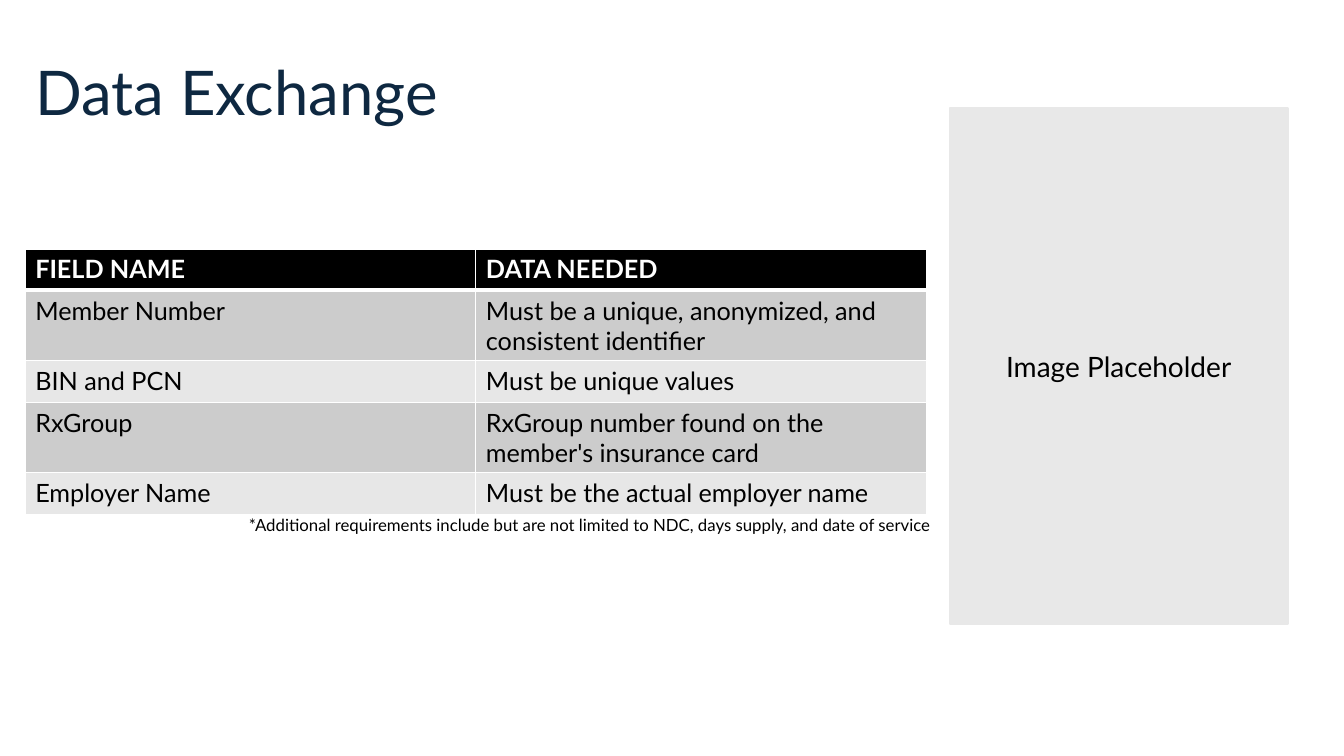
"""Build the Data Exchange slide with its field requirements table."""
from dataclasses import dataclass

from lxml.etree import SubElement
from pptx import Presentation
from pptx.dml.color import RGBColor
from pptx.enum.shapes import MSO_SHAPE
from pptx.enum.text import MSO_ANCHOR, MSO_AUTO_SIZE, PP_ALIGN
from pptx.oxml.ns import qn
from pptx.shapes.base import BaseShape
from pptx.slide import Slide
from pptx.table import _Cell
from pptx.text.text import _Paragraph
from pptx.util import Emu, Pt

PX_PER_INCH = 100
FONT = "Lato"
NAVY = RGBColor(0x0E, 0x28, 0x41)
BLACK = RGBColor(0x00, 0x00, 0x00)
WHITE = RGBColor(0xFF, 0xFF, 0xFF)
PANEL_GRAY = RGBColor(0xE8, 0xE8, 0xE8)
DARK_BAND = RGBColor(0xCC, 0xCC, 0xCC)
LIGHT_BAND = RGBColor(0xE7, 0xE7, 0xE7)
COLUMN_WIDTH = 447
ROW_HEIGHT = 41
THIN, THICK = 1, 3


@dataclass(frozen=True)
class Field:
    """A field name and the data it needs."""
    name: str
    needed: str


@dataclass(frozen=True)
class Box:
    """A position and size in px."""
    left: int
    top: int
    width: int
    height: int

    def emu(self) -> tuple[Emu, Emu, Emu, Emu]:
        """Return the box as EMU lengths."""
        return px(self.left), px(self.top), px(self.width), px(self.height)


FIELDS = [
    Field("FIELD NAME", "DATA NEEDED"),
    Field("Member Number", "Must be a unique, anonymized, and consistent identifier"),
    Field("BIN and PCN", "Must be unique values"),
    Field("RxGroup", "RxGroup number found on the member's insurance card"),
    Field("Employer Name", "Must be the actual employer name"),
]
TITLE_BOX = Box(25, 22, 1150, 145)
PANEL_BOX = Box(942, 107, 335, 512)
TABLE_BOX = Box(25, 247, 2 * COLUMN_WIDTH, len(FIELDS) * ROW_HEIGHT)
FOOTNOTE_BOX = Box(237, 506, 790, 30)


def px(length: int) -> Emu:
    """Turn px into EMU."""
    return Emu(length * 914400 // PX_PER_INCH)


def place(shape: BaseShape, box: Box) -> None:
    """Move and size a shape to a box."""
    shape.left, shape.top, shape.width, shape.height = box.emu()


def write(paragraph: _Paragraph, text: str, size: int, color: RGBColor,
          bold: bool = False) -> None:
    """Add one formatted run."""
    run = paragraph.add_run()
    run.text = text
    run.font.name = FONT
    run.font.size = Pt(size)
    run.font.bold = bold
    run.font.color.rgb = color


def add_borders(cell: _Cell, top: int, bottom: int) -> None:
    """Give a cell white borders, with top and bottom widths in points."""
    properties = cell._tc.get_or_add_tcPr()
    widths = {"a:lnL": THIN, "a:lnR": THIN, "a:lnT": top, "a:lnB": bottom}
    for side, width in widths.items():
        line = SubElement(properties, qn(side), w=str(Pt(width)))
        fill = SubElement(line, qn("a:solidFill"))
        SubElement(fill, qn("a:srgbClr"), val=str(WHITE))


def add_title(slide: Slide) -> None:
    """Fill the title placeholder."""
    title = slide.shapes.title
    place(title, TITLE_BOX)
    frame = title.text_frame
    frame.auto_size = MSO_AUTO_SIZE.NONE
    frame.vertical_anchor = MSO_ANCHOR.MIDDLE
    heading = frame.paragraphs[0]
    heading.alignment = PP_ALIGN.LEFT
    heading.line_spacing = 0.9
    write(heading, "Data Exchange", 44, NAVY)


def add_image_panel(slide: Slide) -> None:
    """Add the gray panel reserved for an image."""
    panel = slide.shapes.add_shape(MSO_SHAPE.RECTANGLE, *PANEL_BOX.emu())
    panel.shadow.inherit = False
    panel.fill.solid()
    panel.fill.fore_color.rgb = PANEL_GRAY
    panel.line.color.rgb = PANEL_GRAY
    panel.line.width = Pt(1.5)
    frame = panel.text_frame
    frame.word_wrap = True
    frame.vertical_anchor = MSO_ANCHOR.MIDDLE
    frame.margin_left = frame.margin_right = px(8)
    frame.margin_top = frame.margin_bottom = px(4)
    frame.paragraphs[0].alignment = PP_ALIGN.CENTER
    write(frame.paragraphs[0], "Image Placeholder", 20, BLACK)


def add_field_table(slide: Slide) -> None:
    """Add the table of fields with a black header and gray bands."""
    table = slide.shapes.add_table(len(FIELDS), 2, *TABLE_BOX.emu()).table
    table.horz_banding = False
    for row, field in enumerate(FIELDS):
        header = row == 0
        band = BLACK if header else DARK_BAND if row % 2 else LIGHT_BAND
        for column, text in enumerate((field.name, field.needed)):
            cell = table.cell(row, column)
            add_borders(cell, THICK if row == 1 else THIN, THICK if header else THIN)
            cell.fill.solid()
            cell.fill.fore_color.rgb = band
            write(cell.text_frame.paragraphs[0], text, 18,
                  WHITE if header else BLACK, header)


def add_footnote(slide: Slide) -> None:
    """Add the note under the table."""
    frame = slide.shapes.add_textbox(*FOOTNOTE_BOX.emu()).text_frame
    frame.word_wrap = True
    frame.auto_size = MSO_AUTO_SIZE.SHAPE_TO_FIT_TEXT
    write(frame.paragraphs[0],
          "*Additional requirements include but are not limited to NDC, "
          "days supply, and date of service", 12, BLACK)


def main() -> None:
    """Build and save the slide."""
    deck = Presentation()
    deck.slide_width, deck.slide_height = px(1333), px(750)
    slide = deck.slides.add_slide(deck.slide_layouts[5])
    add_title(slide)
    add_image_panel(slide)
    add_field_table(slide)
    add_footnote(slide)
    deck.save("out.pptx")


if __name__ == "__main__":
    main()
